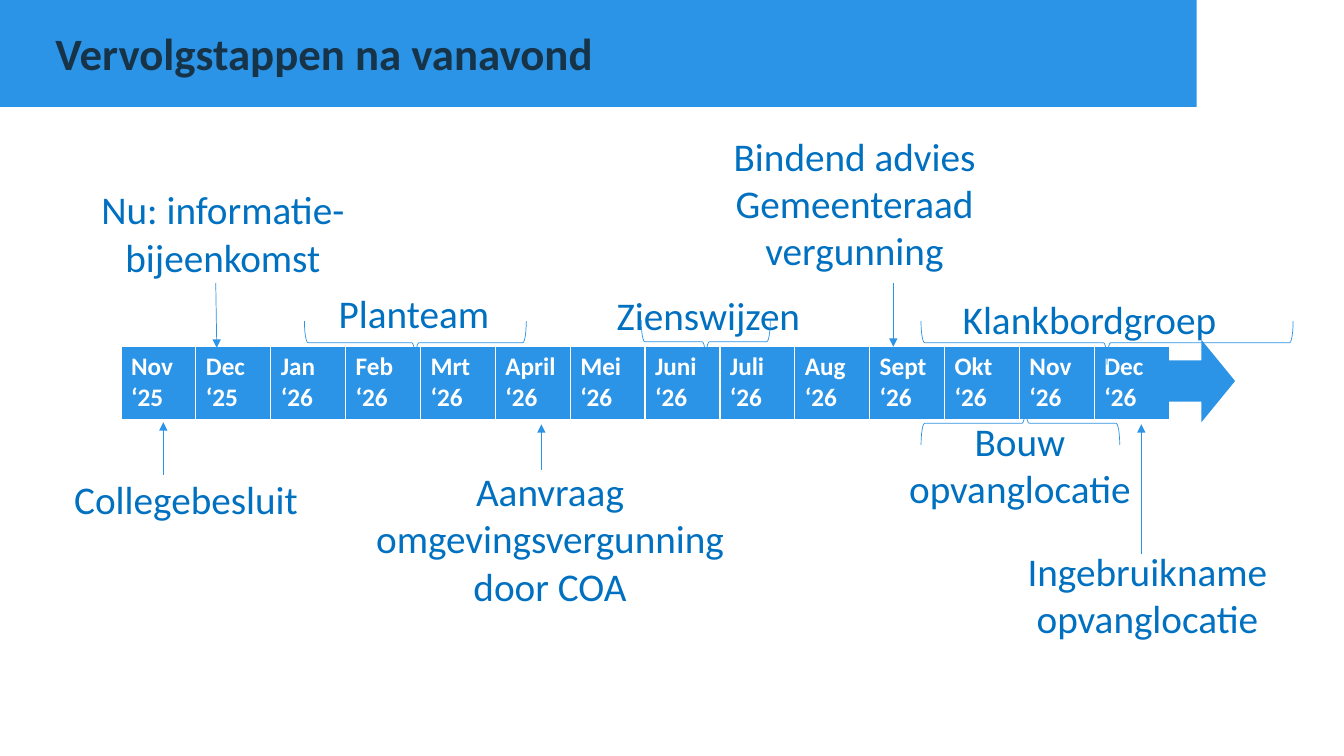
from dataclasses import dataclass

from lxml import etree
from pptx import Presentation
from pptx.dml.color import RGBColor
from pptx.enum import shapes, text
from pptx.oxml.ns import qn
from pptx.util import Inches, Pt

TITLE = "Vervolgstappen na vanavond"
MONTHS = [
    "Nov ‘25", "Dec ‘25", "Jan\n‘26", "Feb ‘26", "Mrt ‘26", "April ‘26", "Mei ‘26",
    "Juni ‘26", "Juli\n‘26", "Aug ‘26", "Sept ‘26", "Okt ‘26", "Nov ‘26", "Dec ‘26",
]
# text, left, top, width, height
LABELS = [
    ("Aanvraag omgevingsvergunning\ndoor COA", 3.58, 5.18, 3.75, 0.32),
    ("Bouw\nopvanglocatie", 8.27, 4.41, 3.69, 0.4),
    ("Bindend advies Gemeenteraad vergunning", 7.13, 1.74, 2.69, 0.54),
    ("Planteam", 3.24, 2.95, 1.73, 0.3),
    ("Collegebesluit", 0.62, 4.75, 2.45, 0.4),
    ("Nu: informatie-bijeenkomst", 0.82, 2.19, 2.78, 0.24),
    ("Klankbordgroep", 9.3, 3, 3.01, 0.33),
    ("Zienswijzen", 5.89, 3.01, 2.27, 0.23),
    ("Ingebruikname\nopvanglocatie", 10.05, 5.7, 2.66, 0.4),
]
# start x, start y, end x, end y
ARROWS = [
    (8.86, 2.81, 8.86, 3.44),
    (1.62, 4.71, 1.62, 4.19),
    (5.37, 4.66, 5.37, 4.21),
    (2.14, 2.81, 2.15, 3.45),
    (11.32, 5.5, 11.32, 4.21),
]
# centre x, centre y, span, rotation, position of the point
BRACES = [
    (4.12, 3.4, 2.2, 270, 0.5),
    (10.98, 3.4, 3.69, 270, 0.5),
    (7, 3.39, 1.28, 270, 0.5),
    (10.12, 4.2, 1.97, 90, 0.474),
]
BRACE_DEPTH = 0.43


@dataclass(frozen=True)
class Theme:
    font: str = "Calibri"
    blue: RGBColor = RGBColor(0x2C, 0x94, 0xE6)
    label: RGBColor = RGBColor(0x00, 0x70, 0xC0)
    title: RGBColor = RGBColor(0x17, 0x33, 0x48)
    white: RGBColor = RGBColor(0xFF, 0xFF, 0xFF)
    title_size: int = 32
    label_size: int = 28
    month_size: int = 18
    line_width: float = 0.5


THEME = Theme()


def box(*lengths):
    return [Inches(length) for length in lengths]


def write(frame, content, size, color, bold=False, align=text.PP_ALIGN.LEFT):
    frame.text = content
    frame.word_wrap = True
    for paragraph in frame.paragraphs:
        paragraph.alignment = align
        for run in paragraph.runs:
            run.font.name = THEME.font
            run.font.size = Pt(size)
            run.font.bold = bold
            run.font.color.rgb = color


def add_filled(slide, preset, *place):
    shape = slide.shapes.add_shape(preset, *box(*place))
    shape.shadow.inherit = False
    shape.fill.solid()
    shape.fill.fore_color.rgb = THEME.blue
    shape.line.fill.background()
    return shape


def style_line(line):
    line.color.rgb = THEME.blue
    line.width = Pt(THEME.line_width)


def add_header(slide):
    banner = add_filled(slide, shapes.MSO_SHAPE.RECTANGLE, 0, 0, 11.87, 1.06)
    slide.shapes._spTree.insert(2, banner._element)
    title = slide.shapes.title
    title.left, title.top, title.width, title.height = box(0.45, 0.27, 11.5, 0.62)
    frame = title.text_frame
    write(frame, TITLE, THEME.title_size, THEME.title, bold=True)
    frame.vertical_anchor = text.MSO_ANCHOR.TOP
    frame.auto_size = text.MSO_AUTO_SIZE.NONE
    frame.margin_bottom = 0
    frame.paragraphs[0].line_spacing = 0.9


def add_cell_borders(cell):
    properties = cell._tc.get_or_add_tcPr()
    for index, (side, width) in enumerate([("lnL", 1), ("lnR", 1), ("lnT", 1), ("lnB", 3)]):
        border = etree.Element(qn(f"a:{side}"), w=str(Pt(width)))
        fill = etree.SubElement(border, qn("a:solidFill"))
        etree.SubElement(fill, qn("a:srgbClr"), val=str(THEME.white))
        properties.insert(index, border)


def add_timeline(slide):
    width, height = 10.4, 0.74
    table = slide.shapes.add_table(1, len(MONTHS), *box(1.2, 3.44, width, height)).table
    for index, month in enumerate(MONTHS):
        table.columns[index].width = Inches(width / len(MONTHS))
        cell = table.cell(0, index)
        cell.fill.solid()
        cell.fill.fore_color.rgb = THEME.blue
        write(cell.text_frame, month, THEME.month_size, THEME.white, bold=True)
        add_cell_borders(cell)
    add_filled(slide, shapes.MSO_SHAPE.RIGHT_ARROW, 11.58, 3.37, 0.67, 0.82)


def add_label(slide, content, *place):
    frame = slide.shapes.add_textbox(*box(*place)).text_frame
    write(frame, content, THEME.label_size, THEME.label, align=text.PP_ALIGN.CENTER)
    frame.vertical_anchor = text.MSO_ANCHOR.MIDDLE


def add_arrow(slide, *ends):
    arrow = slide.shapes.add_connector(shapes.MSO_CONNECTOR.STRAIGHT, *box(*ends))
    style_line(arrow.line)
    etree.SubElement(arrow.line._get_or_add_ln(), qn("a:tailEnd"), type="triangle")
    etree.SubElement(arrow._element.spPr, qn("a:effectLst"))


def add_brace(slide, center_x, center_y, span, rotation, point):
    """Place an upright brace around its centre, then turn it to lie flat."""
    place = box(center_x - BRACE_DEPTH / 2, center_y - span / 2, BRACE_DEPTH, span)
    brace = slide.shapes.add_shape(shapes.MSO_SHAPE.LEFT_BRACE, *place)
    brace.adjustments[1] = point
    brace.rotation = rotation
    brace.shadow.inherit = False
    brace.fill.background()
    style_line(brace.line)


def main():
    presentation = Presentation()
    presentation.slide_width, presentation.slide_height = box(13.33, 7.5)
    slide = presentation.slides.add_slide(presentation.slide_layouts[5])
    add_header(slide)
    add_timeline(slide)
    for label in LABELS:
        add_label(slide, *label)
    for arrow in ARROWS:
        add_arrow(slide, *arrow)
    for brace in BRACES:
        add_brace(slide, *brace)
    presentation.save("out.pptx")


if __name__ == "__main__":
    main()
